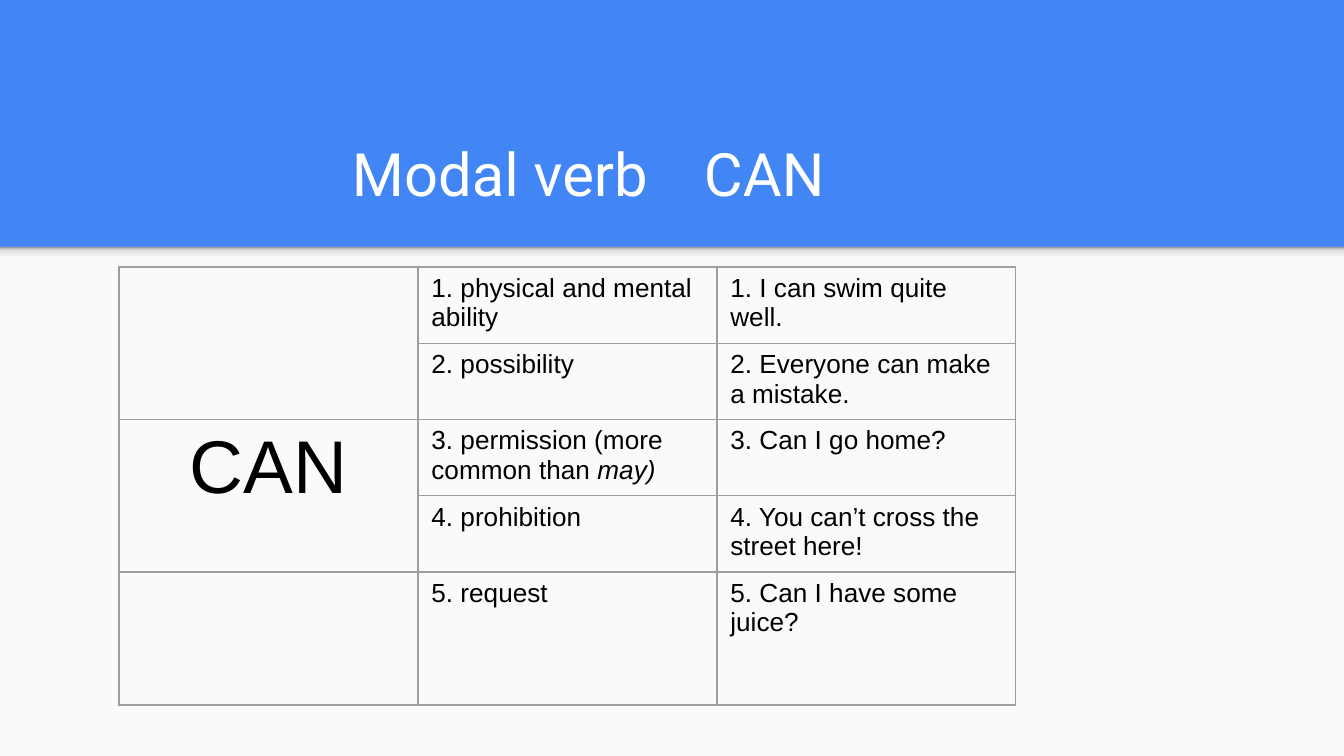
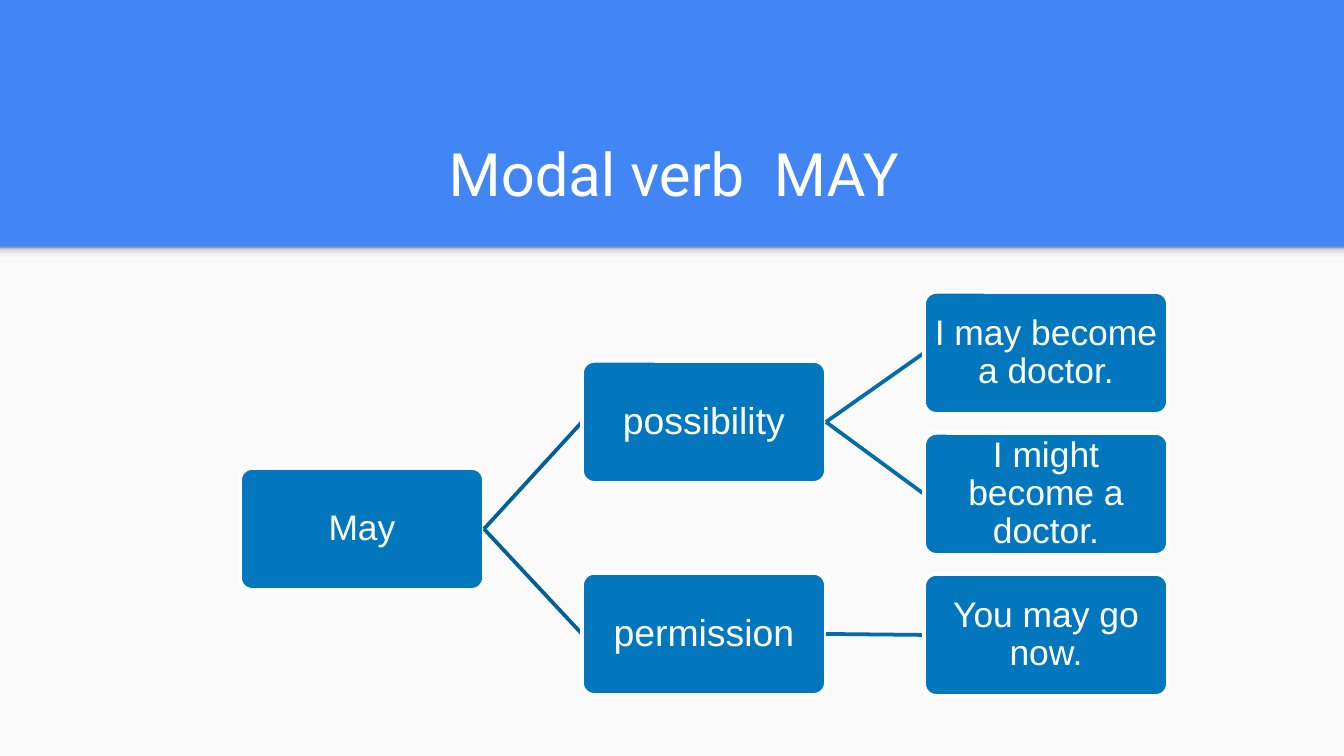
from lxml import etree
from pptx import Presentation
from pptx.dml.color import RGBColor
from pptx.enum.shapes import MSO_CONNECTOR as LINE, MSO_SHAPE as SHAPE
from pptx.enum.text import MSO_ANCHOR as ANCHOR, PP_ALIGN as ALIGN
from pptx.oxml import parse_xml
from pptx.oxml.ns import nsdecls, qn
from pptx.util import Emu, Pt

WIDTH, HEIGHT = 1344, 756
BAND = 247  # height of the blue title band
COLORS = {
    "blue": "4285F4", "paper": "FAFAFA", "white": "FFFFFF", "black": "000000",
    "grid": "9E9E9E", "node": "0277BD", "first link": "025F97", "second link": "026CAC",
}
SHADE = [(0, "F9F9F9"), (36, "F9F9F9"), (80, "DEDEDE"), (100, "999999")]


def px(n):
    return Emu(round(n * 9144000 / WIDTH))


def write(frame, text, size=14, font="Arial", color="black", align=ALIGN.LEFT,
          spacing=None, tabs=()):
    """Fill the frame with one paragraph; the part after a * is italic."""
    frame.word_wrap = True
    line = frame.paragraphs[0]
    line.alignment = align
    line.line_spacing = spacing
    for i, part in enumerate(text.split("*")):
        run = line.add_run()
        run.text = part
        run.font.size = Pt(size)
        run.font.name = font
        run.font.italic = i == 1
        run.font.color.rgb = RGBColor.from_string(COLORS[color])
    if tabs:
        stops = etree.SubElement(line._p.get_or_add_pPr(), qn("a:tabLst"))
        for stop in tabs:
            etree.SubElement(stops, qn("a:tab"), pos=str(px(stop)), algn="l")


deck = Presentation()
deck.slide_width, deck.slide_height = px(WIDTH), px(HEIGHT)

# Both slides: blue background, paper area with a shaded top edge, title
titles = [
    dict(text="\tModal verb\tCAN", tabs=(269, 621)),
    dict(text="Modal verb  MAY", align=ALIGN.CENTER),
]
for title in titles:
    slide = deck.slides.add_slide(deck.slide_layouts[6])
    slide.background.fill.solid()
    slide.background.fill.fore_color.rgb = RGBColor.from_string(COLORS["blue"])

    paper = slide.shapes.add_shape(
        SHAPE.RECTANGLE, 0, px(BAND), px(WIDTH), px(HEIGHT - BAND))
    paper.fill.solid()
    paper.fill.fore_color.rgb = RGBColor.from_string(COLORS["paper"])

    edge = slide.shapes.add_shape(SHAPE.RECTANGLE, 0, px(BAND), px(WIDTH), px(16))
    edge.fill.gradient()
    edge.fill.gradient_angle = 90
    stops = edge._element.spPr.find(".//" + qn("a:gsLst"))
    stops.clear()
    for percent, shade in SHADE:
        stop = etree.SubElement(stops, qn("a:gs"), pos=str(percent * 1000))
        etree.SubElement(stop, qn("a:srgbClr"), val=shade)

    for area in (paper, edge):
        area.line.fill.background()
        area.shadow.inherit = False

    heading = slide.shapes.add_textbox(px(70), px(109), px(1208), px(113)).text_frame
    heading.vertical_anchor = ANCHOR.BOTTOM
    heading.margin_top = heading.margin_bottom = px(13)
    heading.margin_left = heading.margin_right = px(13)
    write(heading, size=32, font="Roboto", color="white", **title)

can_slide, may_slide = deck.slides

# Slide 1: uses of CAN with examples
uses = [
    ("1. physical and mental ability", "1. I can swim quite well."),
    ("2. possibility", "2. Everyone can make a mistake."),
    ("3. permission (more common than *may)", "3. Can I go home?"),
    ("4. prohibition", "4. You can’t cross the street here!"),
    ("5. request", "5. Can I have some juice?"),
]
row_heights = [72, 72, 72, 72, 133]
column_width = 299
table = can_slide.shapes.add_table(
    len(uses), 3, px(119), px(267), px(3 * column_width), px(sum(row_heights))).table
table.first_row = table.horz_banding = False
for column in table.columns:
    column.width = px(column_width)
for row, height in zip(table.rows, row_heights):
    row.height = px(height)

for cell in table.iter_cells():
    cell.fill.background()
    for i, side in enumerate(("lnL", "lnR", "lnT", "lnB")):
        cell._tc.get_or_add_tcPr().insert(i, parse_xml(
            f'<a:{side} {nsdecls("a")} w="{Pt(0.75)}"><a:solidFill>'
            f'<a:srgbClr val="{COLORS["grid"]}"/></a:solidFill></a:{side}>'))

for top in (0, 2):
    table.cell(top, 0).merge(table.cell(top + 1, 0))
write(table.cell(2, 0).text_frame, "CAN", size=40, align=ALIGN.CENTER)
for r, use in enumerate(uses):
    for c, text in enumerate(use, start=1):
        write(table.cell(r, c).text_frame, text)

# Slide 2: tree of MAY, as text, parent, level, top, size
tree = [
    ("May", None, 0, 468, 19),
    ("possibility", "May", 1, 361, 20),
    ("I may become a doctor.", "possibility", 2, 292, 19),
    ("I might become a doctor.", "possibility", 2, 433, 19),
    ("permission", "May", 1, 573, 20),
    ("You may go now.", "permission", 2, 574, 19),
]
link_colors = {1: "first link", 2: "second link"}
LEFT_SITE, RIGHT_SITE = 1, 3
nodes = {}
for text, parent, level, top, size in tree:
    # The link goes in first, so that it lies behind its child
    if parent:
        link = may_slide.shapes.add_connector(LINE.STRAIGHT, 0, 0, 0, 0)
        link.line.width = Pt(2)
        link.line.color.rgb = RGBColor.from_string(COLORS[link_colors[level]])
        etree.SubElement(link._element.spPr, qn("a:effectLst"))

    node = may_slide.shapes.add_shape(
        SHAPE.ROUNDED_RECTANGLE, px(240 + 342 * level), px(top), px(244), px(122))
    node.adjustments[0] = 0.1
    node.shadow.inherit = False
    node.fill.solid()
    node.fill.fore_color.rgb = RGBColor.from_string(COLORS["node"])
    node.line.width = Pt(2)
    node.line.color.rgb = RGBColor.from_string(COLORS["white"])
    label = node.text_frame
    label.vertical_anchor = ANCHOR.MIDDLE
    label.margin_left = label.margin_right = px(5)
    label.margin_top = label.margin_bottom = px(5)
    write(label, text, size=size, color="white", align=ALIGN.CENTER, spacing=0.9)
    nodes[text] = node

    if parent:
        link.begin_connect(nodes[parent], RIGHT_SITE)
        link.end_connect(node, LEFT_SITE)

deck.save("out.pptx")
